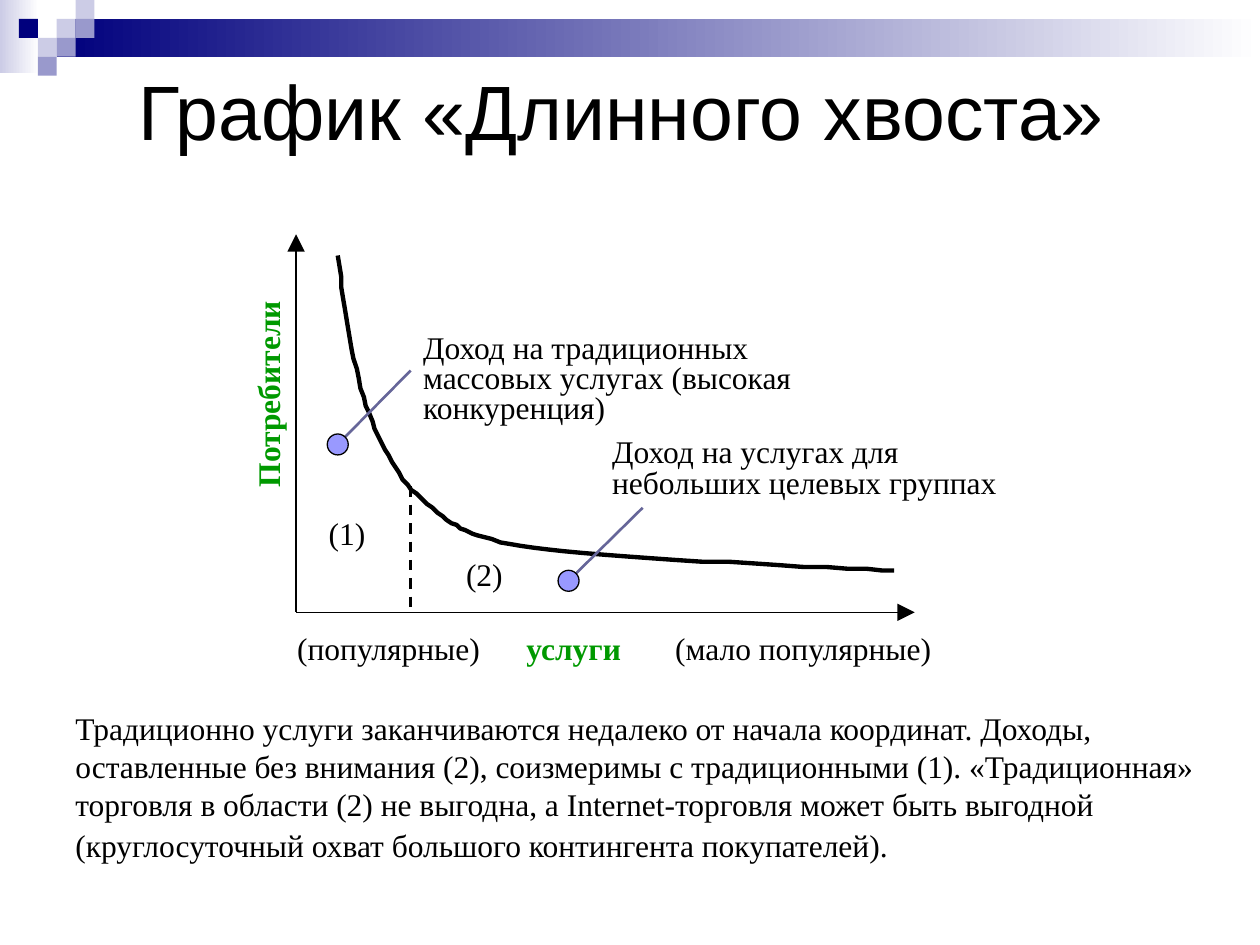
from pptx import Presentation
from pptx.util import Pt
from pptx.dml.color import RGBColor as RGB
from pptx.enum.dml import MSO_LINE as Dash
from pptx.enum.shapes import MSO_SHAPE as Kind, MSO_CONNECTOR as Conn
from pptx.enum.text import MSO_ANCHOR as Anchor
from lxml.etree import SubElement
from pptx.oxml.ns import qn

BLACK = RGB(0x00, 0x00, 0x00)
WHITE = RGB(0xFF, 0xFF, 0xFF)
NAVY = RGB(0x00, 0x00, 0x7D)
PALE = RGB(0xCC, 0xCC, 0xE6)
LILAC = RGB(0x99, 0x99, 0xCC)
GREEN = RGB(0x00, 0x99, 0x00)
SLATE = RGB(0x66, 0x66, 0x99)
DOT = RGB(0x99, 0x99, 0xFF)
SERIF = "Times New Roman"

# Curve: start point, then two controls and an end for each arc
START = (193, 146.2)
ARCS = [
    ((197.3, 178.6), (201.6, 211.7), (211, 236.2)),
    ((219.6, 259.9), (229.7, 277.2), (247, 290.2)),
    ((263.5, 303.1), (268.6, 308.2), (313.2, 313.9)),
    ((357.1, 319.7), (478.1, 324), (511.2, 326.2)),
]


def box(slide, x, y, w, h, fill, kind=Kind.RECTANGLE, edge=None):
    shape = slide.shapes.add_shape(kind, Pt(x), Pt(y), Pt(w), Pt(h))
    shape.shadow.inherit = False
    if isinstance(fill, tuple) and not isinstance(fill, RGB):
        shape.fill.gradient()
        shape.fill.gradient_angle = 0
        for stop, tone in zip(shape.fill.gradient_stops, fill):
            stop.color.rgb = tone
    else:
        shape.fill.solid()
        shape.fill.fore_color.rgb = fill
    if edge is None:
        shape.line.fill.background()
    else:
        shape.line.color.rgb = edge
        shape.line.width = Pt(0.75)


def text(slide, runs, x, y, w, h, size=18, font=SERIF, color=BLACK, bold=False,
         wrap=True, anchor=Anchor.TOP, space=None, turn=0, tabs=()):
    """Add text: a string, or a list of (string, format changes)."""
    shape = slide.shapes.add_textbox(Pt(x), Pt(y), Pt(w), Pt(h))
    shape.rotation = turn
    frame = shape.text_frame
    frame.word_wrap = wrap
    frame.vertical_anchor = anchor
    para = frame.paragraphs[0]
    para.line_spacing = space
    if tabs:
        stops = SubElement(para._p.get_or_add_pPr(), qn("a:tabLst"))
        for pos in tabs:
            SubElement(stops, qn("a:tab"), pos=str(Pt(pos)), algn="l")
    for part, form in [(runs, {})] if isinstance(runs, str) else runs:
        run = para.add_run()
        run.text = part
        run.font.name = font
        run.font.size = Pt(form.get("size", size))
        run.font.bold = form.get("bold", bold)
        run.font.color.rgb = form.get("color", color)


def line(slide, x1, y1, x2, y2, color=BLACK, width=1.5, dash=None, arrow=False):
    link = slide.shapes.add_connector(Conn.STRAIGHT, Pt(x1), Pt(y1), Pt(x2), Pt(y2))
    link.line.color.rgb = color
    link.line.width = Pt(width)
    if dash:
        link.line.dash_style = dash
    if arrow:
        SubElement(link.line._get_or_add_ln(), qn("a:headEnd"),
                   type="triangle", w="lg", len="lg")
    SubElement(link._element.spPr, qn("a:effectLst"))


def curve(slide, start, arcs, steps=16):
    points, p0 = [], start
    for p1, p2, p3 in arcs:
        for i in range(1, steps + 1):
            t = i / steps
            u = 1 - t
            points.append([u**3 * a + 3 * u * u * t * b + 3 * u * t * t * c + t**3 * d
                           for a, b, c, d in zip(p0, p1, p2, p3)])
        p0 = p3
    pen = slide.shapes.build_freeform(*start, scale=Pt(1))
    pen.add_line_segments(points, close=False)
    shape = pen.convert_to_shape()
    shape.shadow.inherit = False
    shape.fill.background()
    shape.line.color.rgb = BLACK
    shape.line.width = Pt(2.5)


def mark(slide, x, y, x2, y2):
    """Dot at x, y with a leader to its label."""
    line(slide, x2, y2, x, y, color=SLATE)
    box(slide, x - 6, y - 6, 12, 12, DOT, kind=Kind.OVAL, edge=BLACK)


def band(slide):
    box(slide, 0, 0, 22.3, 41.8, (PALE, WHITE))
    box(slide, 32.4, 10.8, 687.6, 21.6, (NAVY, WHITE))
    side = 10.8
    for col, row, tone in [(3, 1, PALE), (4, 0, PALE), (4, 1, LILAC), (2, 2, PALE),
                           (1, 1, NAVY), (3, 2, LILAC), (2, 3, LILAC)]:
        box(slide, col * side, row * side, side, side, tone)


def chart(slide):
    # Axes and curve
    line(slide, 169.2, 133.9, 169.2, 349.9, width=0.75, arrow=True)
    line(slide, 522.7, 349.9, 169.2, 349.9, width=0.75, arrow=True)
    curve(slide, START, ARCS)

    # Axis names
    text(slide, [("(популярные)\t", {}),
                 ("услуги", {"color": GREEN, "bold": True}),
                 ("\t(мало популярные)", {})],
         162.7, 355.7, 390.2, 28.8, tabs=(131, 216))
    text(slide, "Потребители", 86.4, 204.5, 133.2, 28.8, color=GREEN, bold=True, turn=270)

    # Areas
    line(slide, 234.7, 277.9, 234.7, 349.9, dash=Dash.DASH)
    text(slide, "(1)", 180.7, 290.2, 35.3, 28.8, wrap=False)
    text(slide, "(2)", 259.2, 313.9, 35.3, 28.8, wrap=False)

    # Callouts
    text(slide, "Доход на традиционных массовых услугах (высокая конкуренция)",
         234.7, 187.9, 228.2, 59, space=0.8)
    text(slide, "Доход на услугах для небольших целевых группах",
         342.7, 247.7, 239.8, 41.8, space=0.8)
    mark(slide, 324.9, 331.9, 367.2, 290.2)
    mark(slide, 193, 254, 234.7, 211.7)


def main():
    deck = Presentation()
    deck.slide_width, deck.slide_height = Pt(720), Pt(540)
    slide = deck.slides.add_slide(deck.slide_layouts[6])
    band(slide)
    text(slide, "График «Длинного хвоста»", 72, 23.8, 599.8, 77.8,
         size=44, font="Arial", anchor=Anchor.MIDDLE)
    text(slide, [("Традиционно услуги заканчиваются недалеко от начала координат. "
                  "Доходы, оставленные без внимания (2), соизмеримы с традиционными (1). "
                  "«Традиционная» торговля в области (2) не выгодна, а Internet-торговля "
                  "может быть выгодной (круглосуточный охват большого контингента "
                  "покупателей).", {}), (" ", {"size": 20})],
         36, 401.8, 660.2, 96.5)
    chart(slide)
    deck.save("out.pptx")


if __name__ == "__main__":
    main()
